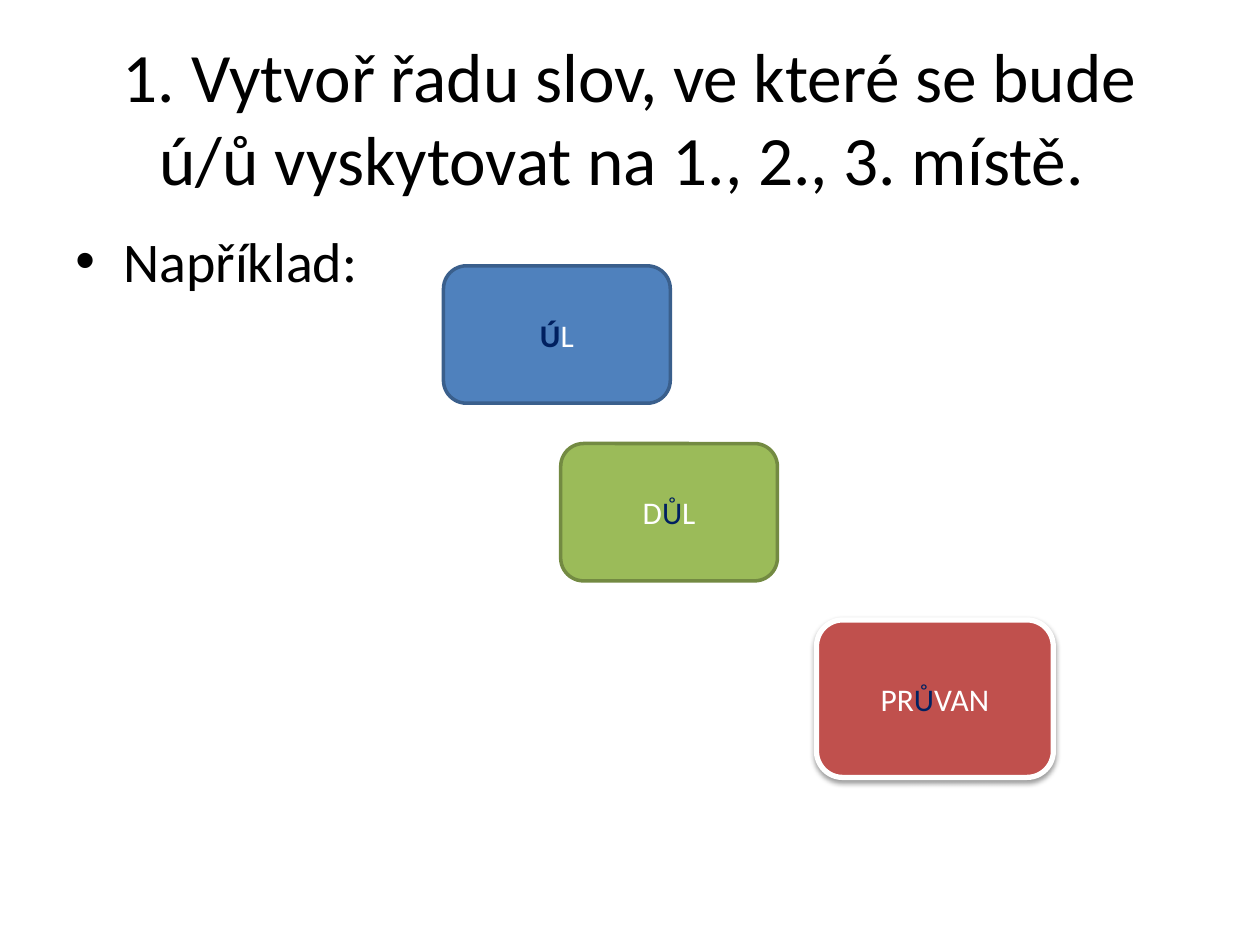
from lxml import etree
from pptx import Presentation
from pptx.dml.color import RGBColor
from pptx.enum import shapes, text
from pptx.oxml import ns
from pptx.util import Inches, Pt

FONT = "Calibri"
BLACK, WHITE, NAVY = "000000", "FFFFFF", "002060"
TITLE = "1. Vytvoř řadu slov, ve které se bude ú/ů vyskytovat na 1., 2., 3. místě. "
INTRO = "Například:"
CARDS = [
    dict(at=(3.52, 2.11, 1.8, 1.09), fill="4F81BD", line="3A5F8C", width=2, shadow=False,
         runs=[("Ú", NAVY, True), ("L", WHITE, False)]),
    dict(at=(4.45, 3.52, 1.72, 1.09), fill="9BBB59", line="738A42", width=2, shadow=False,
         runs=[("D", WHITE, False), ("Ů", NAVY, False), ("L", WHITE, False)]),
    dict(at=(6.48, 4.92, 1.88, 1.25), fill="C0504D", line=WHITE, width=3, shadow=True,
         runs=[("PR", WHITE, False), ("Ů", NAVY, False), ("VAN", WHITE, False)]),
]


def rgb(value):
    return RGBColor.from_string(value)


def box(at):
    return [Inches(v) for v in at]


def add_run(p, words, size, color, bold=False):
    r = p.add_run()
    r.text = words
    r.font.name = FONT
    r.font.size = Pt(size)
    r.font.bold = bold
    r.font.color.rgb = rgb(color)


def add_bullet(p, indent):
    pPr = p._p.get_or_add_pPr()
    pPr.set("marL", str(Inches(indent)))
    pPr.set("indent", str(-Inches(indent)))
    etree.SubElement(pPr, ns.qn("a:buFont"), typeface="Arial")
    etree.SubElement(pPr, ns.qn("a:buChar"), char="•")


def add_shadow(sp, color, alpha, blur, distance, angle):
    effects = sp._element.spPr.find(ns.qn("a:effectLst"))
    outer = etree.SubElement(effects, ns.qn("a:outerShdw"), blurRad=str(Pt(blur)),
                             dist=str(Pt(distance)), dir=str(angle * 60000), rotWithShape="0")
    clr = etree.SubElement(outer, ns.qn("a:srgbClr"), val=color)
    etree.SubElement(clr, ns.qn("a:alpha"), val=str(alpha * 1000))


def add_card(slide, card):
    sp = slide.shapes.add_shape(shapes.MSO_SHAPE.ROUNDED_RECTANGLE, *box(card["at"]))
    sp.shadow.inherit = False
    sp.fill.solid()
    sp.fill.fore_color.rgb = rgb(card["fill"])
    sp.line.color.rgb = rgb(card["line"])
    sp.line.width = Pt(card["width"])
    if card["shadow"]:
        add_shadow(sp, BLACK, 38, 3.1, 1.6, 90)
    tf = sp.text_frame
    tf.vertical_anchor = text.MSO_ANCHOR.MIDDLE
    p = tf.paragraphs[0]
    p.alignment = text.PP_ALIGN.CENTER
    for words, color, bold in card["runs"]:
        add_run(p, words, 18, color, bold)


def main():
    prs = Presentation()
    prs.slide_width, prs.slide_height = Inches(10), Inches(7.5)
    slide = prs.slides.add_slide(prs.slide_layouts[5])

    title = slide.shapes.title
    title.left, title.top, title.width, title.height = box((0.5, 0.3, 9, 1.25))
    tf = title.text_frame
    tf.word_wrap = True
    tf.vertical_anchor = text.MSO_ANCHOR.MIDDLE
    p = tf.paragraphs[0]
    p.alignment = text.PP_ALIGN.CENTER
    add_run(p, TITLE, 39.6, BLACK)

    intro = slide.shapes.add_textbox(*box((0.5, 1.75, 9, 4.95)))
    intro.text_frame.word_wrap = True
    p = intro.text_frame.paragraphs[0]
    add_bullet(p, 0.38)
    add_run(p, INTRO, 32, BLACK)

    for card in CARDS:
        add_card(slide, card)

    prs.save("out.pptx")


if __name__ == "__main__":
    main()
